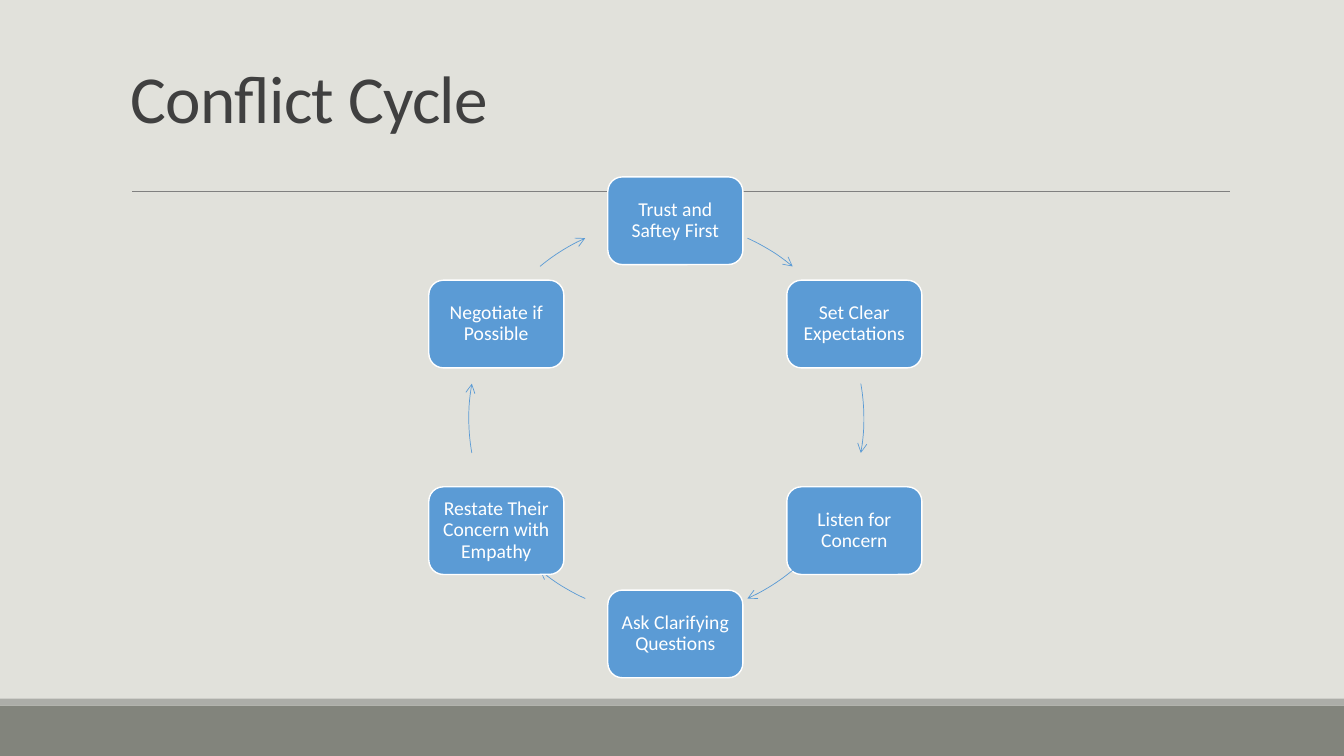
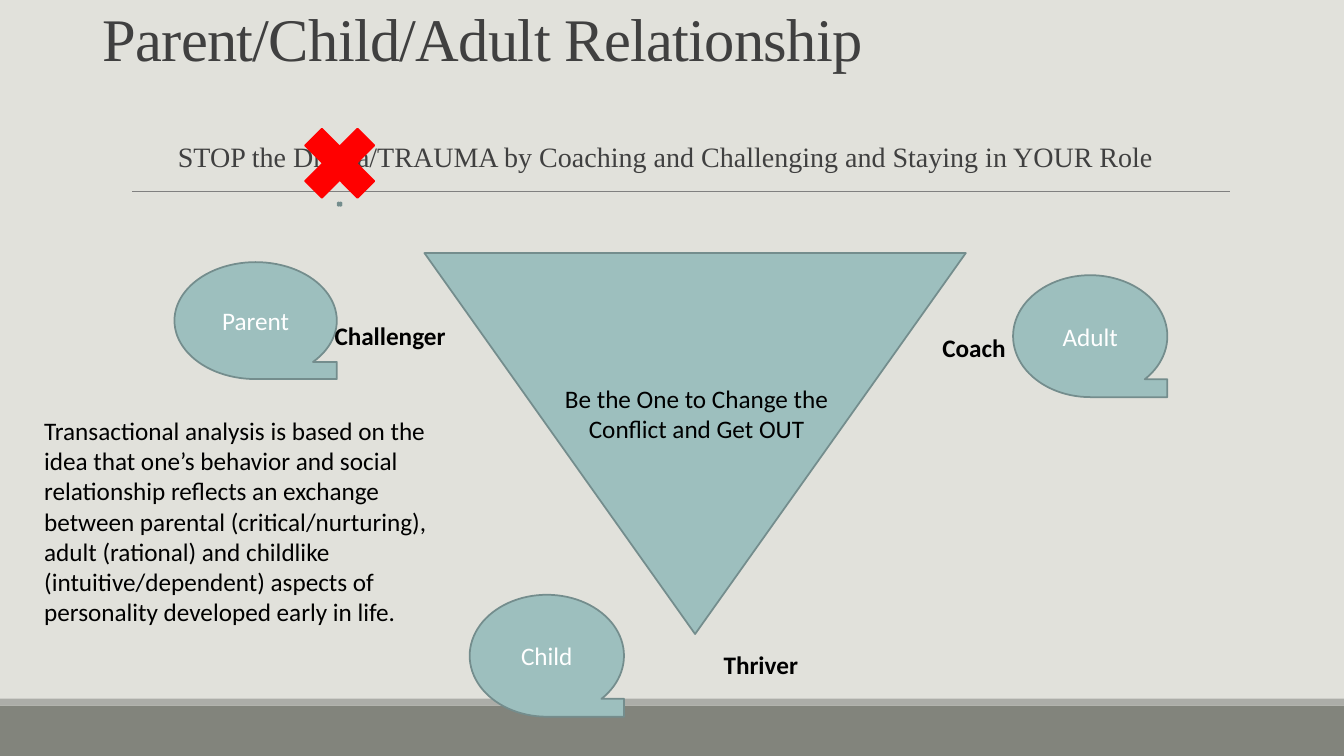
import math
from dataclasses import dataclass

import pptx
import pptx.dml.color
import pptx.enum.shapes
import pptx.enum.text
import pptx.oxml
import pptx.oxml.ns
import pptx.util

KIND = pptx.enum.shapes.MSO_SHAPE
ALIGN = pptx.enum.text.PP_ALIGN
ANCHOR = pptx.enum.text.MSO_ANCHOR
WIDE, HIGH = pptx.util.Inches(13.333), pptx.util.Inches(7.5)


@dataclass(frozen=True)
class Theme:
    back: str = "E1E1DB"
    band: str = "82847C"
    strip: str = "ACADA8"
    rule: str = "808080"
    head: str = "404040"
    node: str = "5B9BD5"
    sage: str = "9DBFBE"
    edge: str = "748D8D"
    stop: str = "FF0000"
    white: str = "FFFFFF"
    black: str = "000000"
    sans: str = "Calibri"
    serif: str = "Times New Roman"
    big: float = 48
    mid: float = 43.2
    sub: float = 20
    body: float = 18
    small: float = 14
    thin: float = 0.5
    line: float = 1
    thick: float = 1.25


T = Theme()


def col(share):
    """Percent of the slide's width."""
    return round(WIDE * share / 100)


def row(share):
    """Percent of the slide's height."""
    return round(HIGH * share / 100)


def place(box):
    x, y, w, h = box
    return col(x), row(y), col(w), row(h)


def rgb(code):
    return pptx.dml.color.RGBColor.from_string(code)


def ink(line, hue, width):
    line.color.rgb = rgb(hue)
    line.width = pptx.util.Pt(width)


def write(shape, text, size, hue, font=T.sans, align=ALIGN.LEFT, bold=False,
          lead=None, anchor=ANCHOR.TOP):
    frame = shape.text_frame
    frame.word_wrap = True
    frame.vertical_anchor = anchor
    para = frame.paragraphs[0]
    para.text = text
    para.alignment = align
    para.line_spacing = lead
    para.font.name = font
    para.font.size = pptx.util.Pt(size)
    para.font.bold = bold
    para.font.color.rgb = rgb(hue)
    return frame


def label(slide, box, text, size=T.body, hue=T.black, **style):
    shape = slide.shapes.add_textbox(*place(box))
    return write(shape, text, size, hue, **style)


def block(slide, kind, box, fill, edge=None, width=T.thick):
    shape = slide.shapes.add_shape(kind, *place(box))
    shape.shadow.inherit = False
    shape.fill.solid()
    shape.fill.fore_color.rgb = rgb(fill)
    if edge:
        ink(shape.line, edge, width)
    else:
        shape.line.fill.background()
    return shape


def title(slide, box, text, size, font):
    frame = label(slide, box, text, size, T.head, font=font, lead=0.85,
                  anchor=ANCHOR.BOTTOM)
    for run in frame.paragraphs[0].runs:
        run._r.get_or_add_rPr().set("spc", "-50")


def page(deck):
    """Add a slide with the shared background, bands and rule."""
    slide = deck.slides.add_slide(deck.slide_layouts[6])
    slide.background.fill.solid()
    slide.background.fill.fore_color.rgb = rgb(T.back)
    block(slide, KIND.RECTANGLE, (0, 93.33, 100, 6.67), T.band)
    block(slide, KIND.RECTANGLE, (0, 92.4, 100, 0.93), T.strip)
    rule = slide.shapes.add_connector(
        pptx.enum.shapes.MSO_CONNECTOR.STRAIGHT,
        col(9.85), row(25.33), col(91.55), row(25.33))
    ink(rule.line, T.rule, T.thin)
    rule._element.spPr.append(pptx.oxml.parse_xml(
        "<a:effectLst %s/>" % pptx.oxml.ns.nsdecls("a")))
    return slide


def node(slide, x, y, text):
    """Draw a rounded step centred on x, y."""
    w, h = 10.05, 11.6
    shape = block(slide, KIND.ROUNDED_RECTANGLE,
                  (x - w / 2, y - h / 2, w, h), T.node, T.white, T.line)
    frame = write(shape, text, T.small, T.white, align=ALIGN.CENTER,
                  lead=0.9, anchor=ANCHOR.MIDDLE)
    pad = pptx.util.Inches(0.06)
    frame.margin_left = frame.margin_right = pad
    frame.margin_top = frame.margin_bottom = pad


def sweep(slide, mid, half):
    """Draw a clockwise arrow along the ring, half degrees each side of mid."""
    arc = slide.shapes.add_shape(KIND.ARC, *place((34.88, 29.2, 29.4, 52.27)))
    arc.shadow.inherit = False
    arc.fill.background()
    ink(arc.line, T.node, T.thin)
    for i, angle in enumerate((mid - half, mid + half)):
        arc.adjustments[i] = angle % 360 * 0.6
    arc.line._get_or_add_ln().append(pptx.oxml.parse_xml(
        '<a:tailEnd type="arrow" %s/>' % pptx.oxml.ns.nsdecls("a")))


def cycle(deck):
    slide = page(deck)
    title(slide, (9, 4.13, 82.5, 14.67), "Conflict Cycle", T.big, T.sans)
    steps = ("Trust and Saftey First", "Set Clear Expectations",
             "Listen for Concern", "Ask Clarifying Questions",
             "Restate Their Concern with Empathy", "Negotiate if Possible")
    mids = (-58, 0, 58, 122, 180, 238)
    for i, (text, mid) in enumerate(zip(steps, mids)):
        turn = math.radians(60 * i - 90)
        node(slide, 50.25 + 15.38 * math.cos(turn),
             56.53 + 27.33 * math.sin(turn), text)
        sweep(slide, mid, 10.1 if mid % 180 == 0 else 7.75)


def roles(deck):
    slide = page(deck)
    title(slide, (6.9, 0, 86.25, 10.4), "Parent/Child/Adult Relationship",
          T.mid, T.serif)
    label(slide, (6.4, 18.27, 86.25, 6),
          "STOP the Drama/TRAUMA by Coaching and Challenging and Staying "
          "in YOUR Role", T.sub, T.head, font=T.serif, align=ALIGN.CENTER,
          lead=0.9)
    block(slide, KIND.FLOWCHART_MERGE, (31.58, 33.47, 40.28, 50.4),
          T.sage, T.edge)
    for text, box in (("Parent", (12.98, 34.67, 12.08, 15.47)),
                      ("Adult", (75.38, 36.4, 11.48, 16.13)),
                      ("Child", (34.95, 78.67, 11.48, 16.13))):
        tape = block(slide, KIND.FLOWCHART_SEQUENTIAL_ACCESS_STORAGE, box,
                     T.sage, T.edge)
        write(tape, text, T.body, T.white, align=ALIGN.CENTER,
              anchor=ANCHOR.MIDDLE)
    for text, x, y, w in (("Challenger", 24.15, 41.73, 10.28),
                          ("Coach", 69.38, 43.33, 8.18),
                          ("Thriver", 53.1, 85.2, 9.53)):
        label(slide, (x, y, w, 5.33), text, bold=True)
    label(slide, (40.88, 50, 21.9, 9.47),
          "Be the One to Change the Conflict and Get OUT",
          align=ALIGN.CENTER)
    for box, fill, edge in (((25.05, 26.67, 0.45, 0.67), T.sage, T.edge),
                            ((21.53, 14.93, 7.5, 13.33), T.stop, T.stop)):
        block(slide, KIND.MATH_MULTIPLY, box, fill, edge)
    label(slide, (2.55, 54.27, 31.88, 29.6),
          "Transactional analysis is based on the idea that one’s behavior "
          "and social relationship reflects an exchange between parental "
          "(critical/nurturing), adult (rational) and childlike "
          "(intuitive/dependent) aspects of personality developed early "
          "in life.")


def main():
    deck = pptx.Presentation()
    deck.slide_width, deck.slide_height = WIDE, HIGH
    cycle(deck)
    roles(deck)
    deck.save("out.pptx")


if __name__ == "__main__":
    main()
